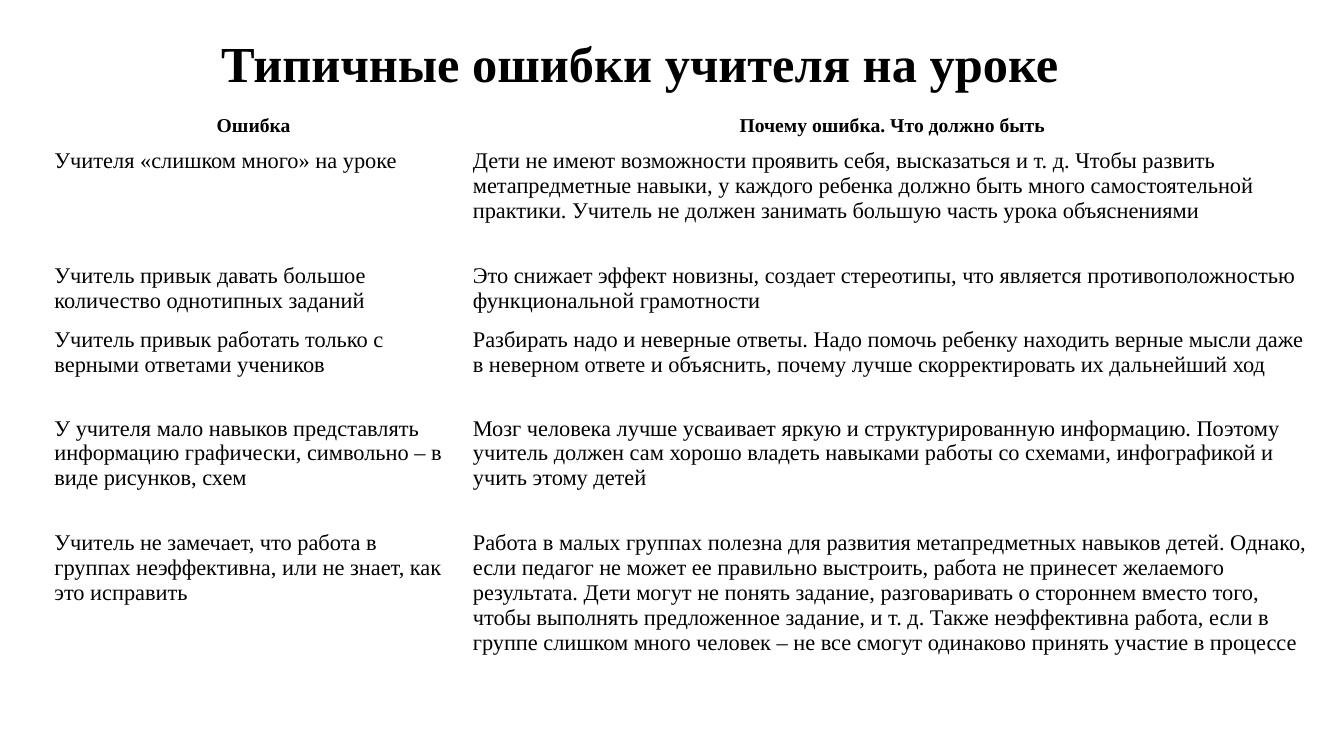
import pptx
import pptx.dml.color
import pptx.enum.text
import pptx.oxml
import pptx.oxml.ns
import pptx.util
from lxml import etree

PX = 9144  # one hundred px to the inch
COLORS = {"text": "000000", "grid": "FFFFFF"}
FONT = "Times New Roman"
ALIGN = pptx.enum.text.PP_ALIGN
ANCHOR = pptx.enum.text.MSO_ANCHOR

TITLE = "Типичные ошибки учителя на уроке"
HEADS = ("Ошибка", "Почему ошибка. Что должно быть")
ERRORS = [
    ("Учителя «слишком много» на уроке",
     "Дети не имеют возможности проявить себя, высказаться и т. д. "
     "Чтобы развить метапредметные навыки, у каждого ребенка должно быть "
     "много самостоятельной практики. Учитель не должен занимать большую "
     "часть урока объяснениями"),
    ("Учитель привык давать большое количество однотипных заданий",
     "Это снижает эффект новизны, создает стереотипы, что является "
     "противоположностью функциональной грамотности"),
    ("Учитель привык работать только с верными ответами учеников",
     "Разбирать надо и неверные ответы. Надо помочь ребенку находить верные "
     "мысли даже в неверном ответе и объяснить, почему лучше "
     "скорректировать их дальнейший ход"),
    ("У учителя мало навыков представлять информацию графически, "
     "символьно – в виде рисунков, схем",
     "Мозг человека лучше усваивает яркую и структурированную информацию. "
     "Поэтому учитель должен сам хорошо владеть навыками работы со схемами, "
     "инфографикой и учить этому детей"),
    ("Учитель не замечает, что работа в группах неэффективна, "
     "или не знает, как это исправить",
     "Работа в малых группах полезна для развития метапредметных навыков "
     "детей. Однако, если педагог не может ее правильно выстроить, работа "
     "не принесет желаемого результата. Дети могут не понять задание, "
     "разговаривать о стороннем вместо того, чтобы выполнять "
     "предложенное задание, и т. д. Также неэффективна работа, если в "
     "группе слишком много человек – не все смогут одинаково принять "
     "участие в процессе"),
]
COLS = (415, 852)
ROWS = (33, 114, 62, 88, 114, 227)


def write(frame, text, size=16, bold=False, align=ALIGN.LEFT, space=None):
    para = frame.paragraphs[0]
    para.alignment = align
    para.line_spacing = space
    run = para.add_run()
    run.text = text
    font = run.font
    font.name, font.bold = FONT, bold
    font.size = pptx.util.Pt(size)
    font.color.rgb = pptx.dml.color.RGBColor.from_string(COLORS["text"])


def edge(cell, base):
    """Draw the cell's borders; base is the width in points of the lower one."""
    props = cell._tc.get_or_add_tcPr()
    widths = {"lnL": 1, "lnR": 1, "lnT": 1, "lnB": base}
    for spot, (tag, width) in enumerate(widths.items()):
        line = pptx.oxml.parse_xml(
            f'<a:{tag} {pptx.oxml.ns.nsdecls("a")} w="{pptx.util.Pt(width)}"/>')
        fill = etree.SubElement(line, pptx.oxml.ns.qn("a:solidFill"))
        etree.SubElement(fill, pptx.oxml.ns.qn("a:srgbClr"), val=COLORS["grid"])
        props.insert(spot, line)


class Page:
    def __init__(self, deck):
        self.slide = deck.slides.add_slide(deck.slide_layouts[6])

    def text(self, box, text, **style):
        frame = self.slide.shapes.add_textbox(*(n * PX for n in box)).text_frame
        frame.word_wrap = True
        frame.vertical_anchor = ANCHOR.MIDDLE
        write(frame, text, **style)

    def table(self, left, top, cols, rows, data):
        shape = self.slide.shapes.add_table(
            len(rows), len(cols), left * PX, top * PX,
            sum(cols) * PX, sum(rows) * PX)
        table = shape.table
        table.horz_banding = False
        for col, width in zip(table.columns, cols):
            col.width = width * PX
        for i, (row, height, texts) in enumerate(zip(table.rows, rows, data)):
            row.height = height * PX
            head = i == 0
            style = dict(size=14, bold=True, align=ALIGN.CENTER) if head else {}
            for cell, text in zip(row.cells, texts):
                cell.fill.background()
                edge(cell, 3 if head else 1)
                write(cell.text_frame, text, **style)


def main():
    deck = pptx.Presentation()
    deck.slide_width, deck.slide_height = 1333 * PX, 750 * PX
    page = Page(deck)
    page.text((40, 10, 1189, 95), TITLE, size=36, bold=True,
              align=ALIGN.CENTER, space=1.15)
    page.table(44, 109, COLS, ROWS, [HEADS, *ERRORS])
    deck.save("out.pptx")


if __name__ == "__main__":
    main()
